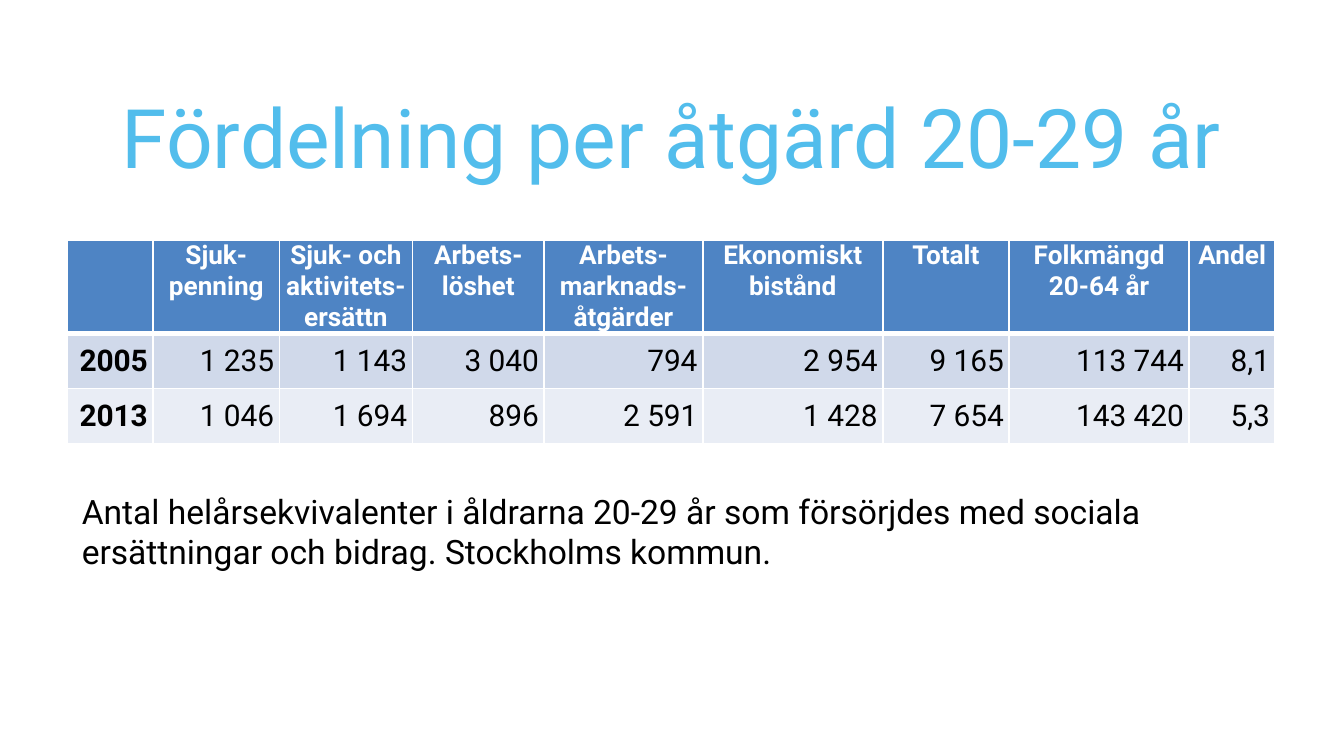
import dataclasses

import lxml.etree
import pptx
import pptx.dml.color
import pptx.enum.text
import pptx.oxml.ns
import pptx.slide
import pptx.table
import pptx.text.text
import pptx.util

Inches = pptx.util.Inches
Align = pptx.enum.text.PP_ALIGN
Anchor = pptx.enum.text.MSO_ANCHOR


@dataclasses.dataclass(frozen=True)
class Column:
    heading: str
    width: float
    values: tuple[str, str]


@dataclasses.dataclass(frozen=True)
class RowStyle:
    height: float
    fill: str
    color: str
    size: int
    align: Align
    anchor: Anchor
    top_border: int = 1
    bottom_border: int = 1


COLUMNS = [
    Column("", 0.64, ("2005", "2013")),
    Column("Sjuk-penning", 0.94, ("1 235", "1 046")),
    Column("Sjuk- och aktivitets-ersättn", 0.99, ("1 143", "1 694")),
    Column("Arbets-löshet", 0.98, ("3 040", "896")),
    Column("Arbets-marknads-åtgärder", 1.18, ("794", "2 591")),
    Column("Ekonomiskt bistånd", 1.34, ("2 954", "1 428")),
    Column("Totalt", 0.94, ("9 165", "7 654")),
    Column("Folkmängd 20-64 år", 1.34, ("113 744", "143 420")),
    Column("Andel", 0.64, ("8,1", "5,3")),
]
ROW_STYLES = [
    RowStyle(0.69, "4E84C4", "FFFFFF", 14, Align.CENTER, Anchor.TOP, bottom_border=3),
    RowStyle(0.41, "D0D9EA", "000000", 16, Align.RIGHT, Anchor.MIDDLE, top_border=3),
    RowStyle(0.41, "E9EDF5", "000000", 16, Align.RIGHT, Anchor.MIDDLE),
]


def rgb(color: str) -> pptx.dml.color.RGBColor:
    return pptx.dml.color.RGBColor.from_string(color)


def write_text(frame: pptx.text.text.TextFrame, text: str, *, size: int, color: str = "000000",
               bold: bool = False, align: Align = Align.LEFT) -> None:
    frame.word_wrap = True
    paragraph = frame.paragraphs[0]
    paragraph.alignment = align
    run = paragraph.add_run()
    run.text = text
    run.font.name = "Roboto"
    run.font.size = pptx.util.Pt(size)
    run.font.bold = bold
    run.font.color.rgb = rgb(color)


def add_borders(cell: pptx.table._Cell, top: int, bottom: int) -> None:
    properties = cell._tc.get_or_add_tcPr()
    qualify = pptx.oxml.ns.qn
    for position, (side, width) in enumerate([("L", 1), ("R", 1), ("T", top), ("B", bottom)]):
        line = lxml.etree.Element(qualify(f"a:ln{side}"), w=str(pptx.util.Pt(width)))
        fill = lxml.etree.SubElement(line, qualify("a:solidFill"))
        lxml.etree.SubElement(fill, qualify("a:srgbClr"), val="FFFFFF")
        properties.insert(position, line)


def format_cell(cell: pptx.table._Cell, text: str, style: RowStyle, bold: bool) -> None:
    cell.fill.solid()
    cell.fill.fore_color.rgb = rgb(style.fill)
    cell.margin_left = cell.margin_right = Inches(0.04)
    cell.margin_top = cell.margin_bottom = 0
    cell.vertical_anchor = style.anchor
    add_borders(cell, style.top_border, style.bottom_border)
    if text:
        write_text(cell.text_frame, text, size=style.size, color=style.color,
                   bold=bold, align=style.align)


def add_distribution_table(slide: pptx.slide.Slide) -> None:
    height = sum(style.height for style in ROW_STYLES)
    table = slide.shapes.add_table(
        len(ROW_STYLES), len(COLUMNS), Inches(0.5), Inches(1.79), Inches(9), Inches(height)
    ).table
    for row, style in zip(table.rows, ROW_STYLES):
        row.height = Inches(style.height)
    for column_index, column in enumerate(COLUMNS):
        table.columns[column_index].width = Inches(column.width)
        for row_index, text in enumerate((column.heading, *column.values)):
            format_cell(table.cell(row_index, column_index), text, ROW_STYLES[row_index],
                        bold=row_index == 0 or column_index == 0)


def main() -> None:
    presentation = pptx.Presentation()
    presentation.slide_width = Inches(10)
    presentation.slide_height = Inches(10 * 9 / 16)
    slide = presentation.slides.add_slide(presentation.slide_layouts[5])

    title = slide.shapes.title
    title.left, title.top = Inches(0.5), Inches(0.54)
    title.width, title.height = Inches(9), Inches(0.94)
    title.text_frame.vertical_anchor = Anchor.MIDDLE
    write_text(title.text_frame, "Fördelning per åtgärd 20-29 år",
               size=44, color="52BDEC", align=Align.CENTER)

    add_distribution_table(slide)

    caption = slide.shapes.add_textbox(Inches(0.51), Inches(3.6), Inches(8.98), Inches(0.71))
    write_text(
        caption.text_frame,
        "Antal helårsekvivalenter i åldrarna 20-29 år som försörjdes med sociala "
        "ersättningar och bidrag. Stockholms kommun.",
        size=18,
    )
    presentation.save("out.pptx")


if __name__ == "__main__":
    main()
